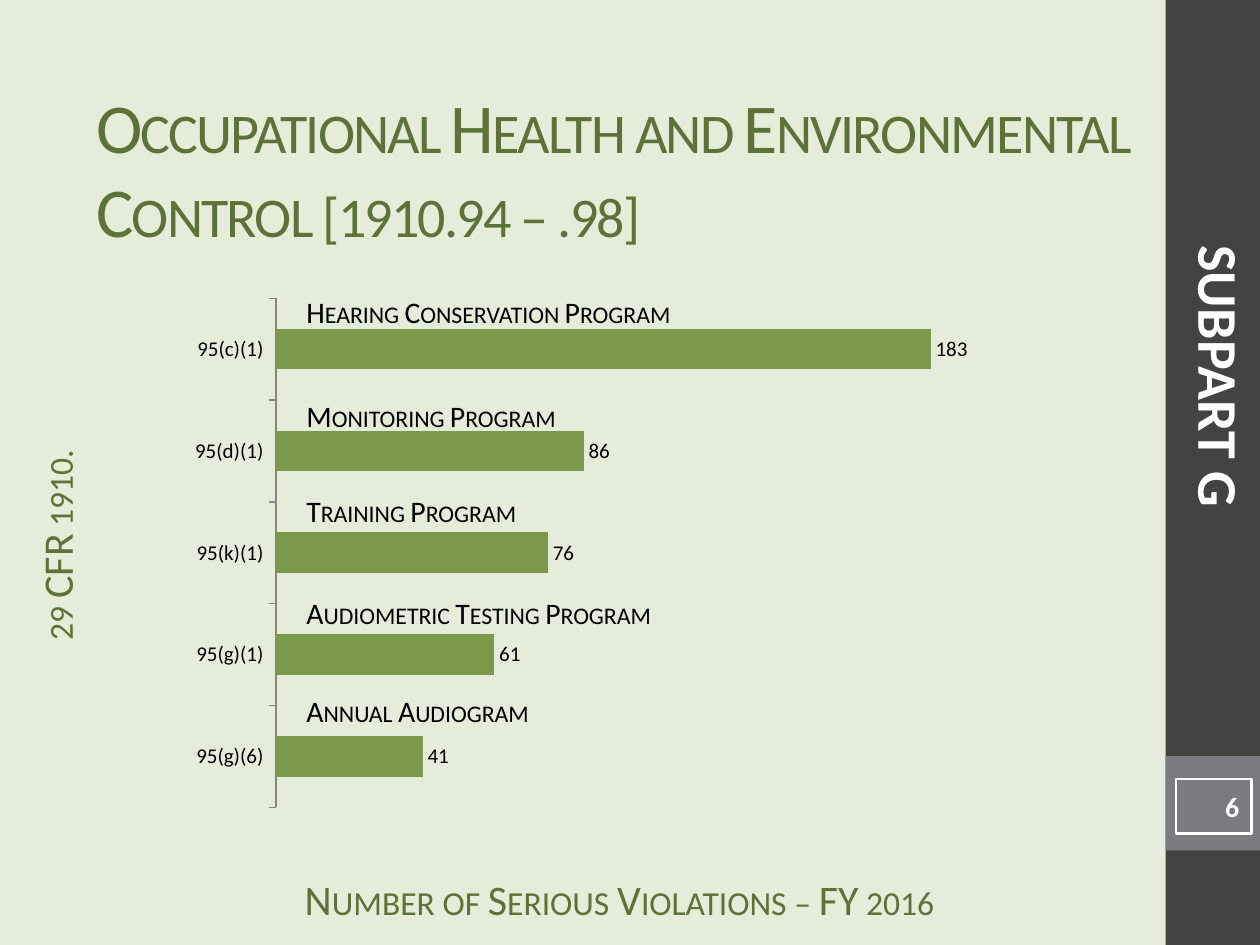
from collections import namedtuple
from dataclasses import dataclass

import pptx
import pptx.chart.data
import pptx.dml.color
import pptx.enum.chart
import pptx.enum.shapes
import pptx.enum.text
import pptx.util

Box = namedtuple("Box", "x y w h")
ALIGN = pptx.enum.text.PP_ALIGN
FIT = pptx.enum.text.MSO_AUTO_SIZE
MID = pptx.enum.text.MSO_ANCHOR.MIDDLE
CELL = 1 / 12


@dataclass(frozen=True)
class Theme:
    face: str = "Calibri"
    back: str = "E5ECD9"
    dark: str = "434342"
    gray: str = "797B7E"
    green: str = "5D7238"
    bar: str = "7C984A"
    axis: str = "868686"
    black: str = "000000"
    white: str = "FFFFFF"
    title: int = 40
    side: int = 32
    head: int = 24
    note: int = 17
    page: int = 16
    tick: int = 12


THEME = Theme()
ROWS = [
    ("95(c)(1)", 183, "Hearing Conservation Program", 0, 52),
    ("95(d)(1)", 86, "Monitoring Program", 9.9, 54),
    ("95(k)(1)", 76, "Training Program", 18.9, 59),
    ("95(g)(1)", 61, "Audiometric Testing Program", 28.7, 59),
    ("95(g)(6)", 41, "Annual Audiogram", 38, 57),
]


def tint(code):
    return pptx.dml.color.RGBColor.from_string(code)


def span(box):
    return [pptx.util.Inches(part * CELL) for part in box]


def within(box, x, y, w, h):
    return Box(box.x + x, box.y + y, w, h)


def style(item, **form):
    for name, value in form.items():
        setattr(item, name, value)


def write(shape, text, size, color, align=ALIGN.LEFT, bold=False, caps=False, space=0, **form):
    frame = shape.text_frame
    style(frame, **{"word_wrap": True, **form})
    line = frame.paragraphs[0]
    line.alignment = align
    run = line.add_run()
    run.text = text
    style(run.font, name=THEME.face, size=pptx.util.Pt(size), bold=bold)
    run.font.color.rgb = tint(color)
    props = run.font._element
    if caps:
        props.set("cap", "small")
    if space:
        props.set("spc", str(space * 100))


def label(slide, box, text, size, color, turn=0, **form):
    shape = slide.shapes.add_textbox(*span(box))
    shape.rotation = turn
    write(shape, text, size, color, **form)


def panel(slide, box, fill=None, line=None):
    shape = slide.shapes.add_shape(pptx.enum.shapes.MSO_SHAPE.RECTANGLE, *span(box))
    shape.shadow.inherit = False
    if fill:
        shape.fill.solid()
        shape.fill.fore_color.rgb = tint(fill)
    else:
        shape.fill.background()
    if line:
        shape.line.color.rgb = tint(line)
        shape.line.width = pptx.util.Pt(1.5)
    else:
        shape.line.fill.background()
    return shape


def banner(slide, box):
    label(slide, box, "Occupational Health and Environmental Control [1910.94 – .98]",
          THEME.title, THEME.green, caps=True, space=-1, vertical_anchor=MID)


def sidebar(slide, box):
    panel(slide, box, THEME.dark)
    panel(slide, within(box, 0, 72, box.w, box.w), THEME.gray)
    page = panel(slide, within(box, 1, 74.2, 7.2, 5.2), line=THEME.white)
    write(page, "6", THEME.page, THEME.white, align=ALIGN.RIGHT, bold=True,
          vertical_anchor=MID)
    label(slide, within(box, -30.7, 32, 71.8, 7.7), "SUBPART G", THEME.side, THEME.white,
          turn=90, align=ALIGN.CENTER, bold=True, auto_size=FIT.SHAPE_TO_FIT_TEXT)


def legend(slide, box, text, turn=0):
    label(slide, box, text, THEME.head, THEME.green, turn=turn,
          align=ALIGN.CENTER, caps=True, margin_top=0)


def graph(slide, box):
    kinds = pptx.enum.chart
    data = pptx.chart.data.CategoryChartData()
    data.categories = [row[0] for row in reversed(ROWS)]
    data.add_series("Series 1", [row[1] for row in reversed(ROWS)])
    chart = slide.shapes.add_chart(kinds.XL_CHART_TYPE.BAR_CLUSTERED, *span(box), data).chart
    style(chart, has_legend=False, has_title=False)
    style(chart.font, name=THEME.face, size=pptx.util.Pt(THEME.tick))
    chart.font.color.rgb = tint(THEME.black)
    style(chart.value_axis, visible=False, has_major_gridlines=False,
          minimum_scale=0, maximum_scale=200)
    style(chart.category_axis, has_major_gridlines=False,
          major_tick_mark=kinds.XL_TICK_MARK.OUTSIDE)
    chart.category_axis.format.line.color.rgb = tint(THEME.axis)
    plot = chart.plots[0]
    style(plot, gap_width=150, vary_by_categories=False, has_data_labels=True)
    style(plot.data_labels, show_value=True,
          position=kinds.XL_LABEL_POSITION.OUTSIDE_END)
    fill = plot.series[0].format.fill
    fill.solid()
    fill.fore_color.rgb = tint(THEME.bar)
    for _, _, text, drop, wide in ROWS:
        label(slide, within(box, 11, drop, wide, 4.7), text, THEME.note, THEME.black,
              caps=True, auto_size=FIT.SHAPE_TO_FIT_TEXT)


def main():
    deck = pptx.Presentation()
    style(deck, slide_width=pptx.util.Inches(10), slide_height=pptx.util.Inches(7.5))
    slide = deck.slides.add_slide(deck.slide_layouts[6])
    slide.background.fill.solid()
    slide.background.fill.fore_color.rgb = tint(THEME.back)
    sidebar(slide, Box(111, 0, 9, 90))
    legend(slide, Box(25, 83.2, 68, 4), "Number of Serious Violations – FY 2016")
    legend(slide, Box(-18.7, 48.4, 50.3, 7), "29 CFR 1910.", turn=270)
    graph(slide, Box(17, 27.4, 79, 50.5))
    banner(slide, Box(8, 7, 102.7, 18))
    deck.save("out.pptx")


if __name__ == "__main__":
    main()
